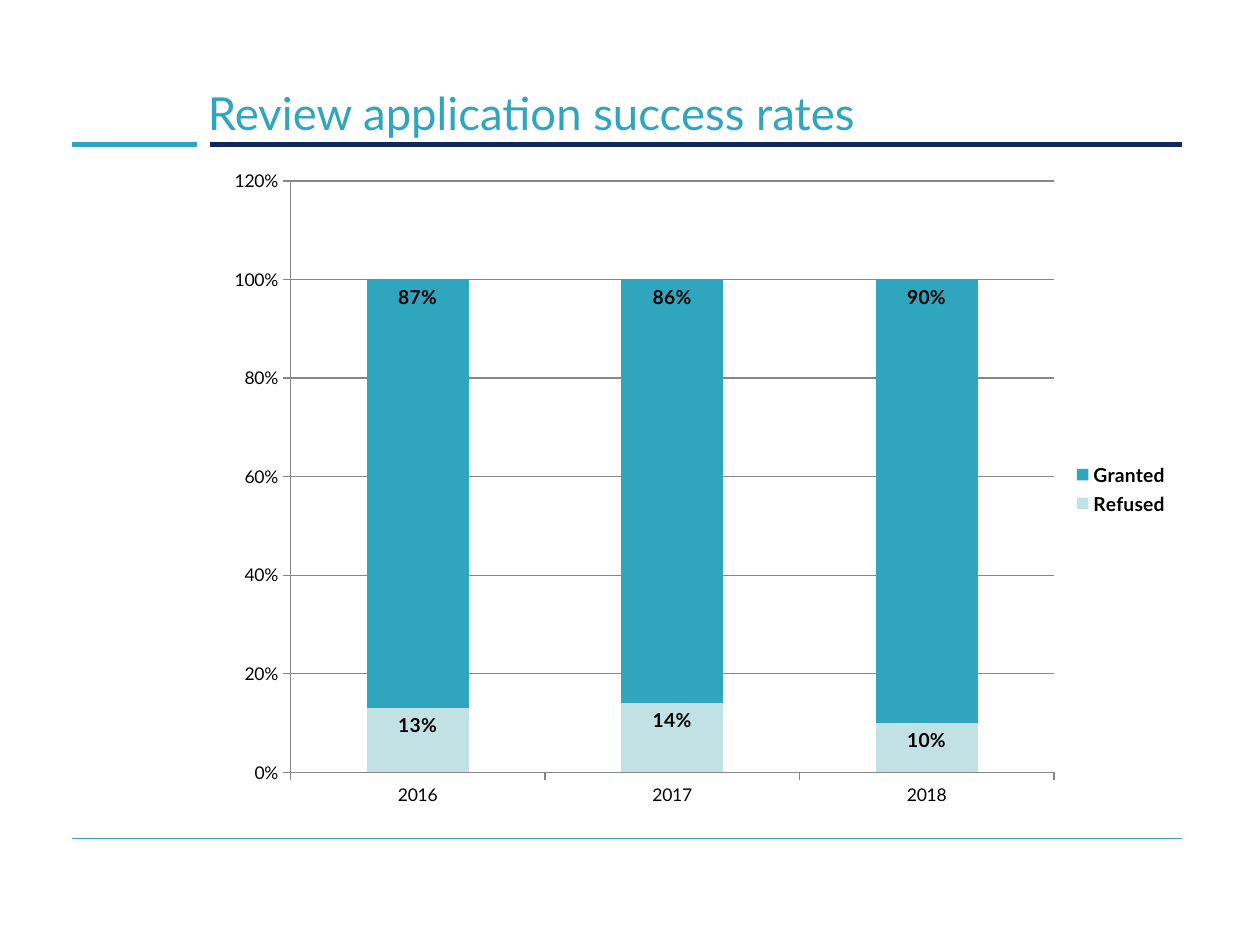
from lxml.etree import SubElement
from pptx import Presentation
from pptx.chart.data import CategoryChartData
from pptx.dml.color import RGBColor
from pptx.enum.chart import XL_CHART_TYPE as ChartType
from pptx.enum.chart import XL_LABEL_POSITION as LabelPosition
from pptx.enum.chart import XL_LEGEND_POSITION as LegendPosition
from pptx.enum.chart import XL_TICK_MARK as TickMark
from pptx.enum.shapes import MSO_CONNECTOR as Connector
from pptx.enum.text import MSO_ANCHOR as Anchor
from pptx.enum.text import MSO_AUTO_SIZE as AutoSize
from pptx.enum.text import PP_ALIGN as Align
from pptx.oxml.ns import qn
from pptx.util import Inches, Pt

TEAL = RGBColor(0x30, 0xA5, 0xBE)
PALE = RGBColor(0xC2, 0xE1, 0xE4)
NAVY = RGBColor(0x0E, 0x28, 0x5E)
BLACK = RGBColor(0, 0, 0)
GREY = RGBColor(0x86, 0x86, 0x86)
FONT = "Lato"
WIDTH, HEIGHT = Inches(10), Inches(7.5)
LEFT, INNER, RIGHT = 0.057, 0.167, 0.938
HEAD_RULE, FOOT_RULE = 0.153, 0.887

YEARS = ["2016", "2017", "2018"]
RATES = [
    ("Refused", PALE, [0.13, 0.14, 0.10]),
    ("Granted", TEAL, [0.87, 0.86, 0.90]),
]


def share_box(left, top, right, bottom):
    return (
        int(WIDTH * left), int(HEIGHT * top),
        int(WIDTH * (right - left)), int(HEIGHT * (bottom - top)),
    )


def style_font(font, size, color=BLACK, bold=False):
    font.name = FONT
    font.size = Pt(size)
    font.bold = bold
    font.color.rgb = color


def write_text(frame, text, size, color, align=Align.LEFT, anchor=Anchor.MIDDLE):
    frame.word_wrap = True
    frame.auto_size = AutoSize.NONE
    frame.vertical_anchor = anchor
    para = frame.paragraphs[0]
    para.alignment = align
    span = para.add_run()
    span.text = text
    style_font(span.font, size, color)


def add_rule(page, start, end, height, color, weight):
    left, top, width, _ = share_box(start, height, end, height)
    rule = page.shapes.add_connector(Connector.STRAIGHT, left, top, left + width, top)
    rule.line.color.rgb = color
    rule.line.width = Pt(weight)
    SubElement(rule._element.spPr, qn("a:effectLst"))


def add_rules(page):
    add_rule(page, INNER, RIGHT, HEAD_RULE, NAVY, 3)
    add_rule(page, LEFT, 0.156, HEAD_RULE, TEAL, 3)
    add_rule(page, LEFT, RIGHT, FOOT_RULE, TEAL, 0.75)


def add_title(page, box):
    title = page.shapes.title
    title.left, title.top, title.width, title.height = box
    write_text(title.text_frame, "Review application success rates", 26, TEAL)


def place_plot(chart, **shares):
    plot_area = chart._chartSpace.chart.plotArea
    for layout in plot_area.findall(qn("c:layout")):
        plot_area.remove(layout)
    layout = SubElement(plot_area, qn("c:layout"))
    plot_area.insert(0, layout)
    manual = SubElement(layout, qn("c:manualLayout"))
    settings = {"layoutTarget": "inner", "xMode": "edge", "yMode": "edge", **shares}
    for name, value in settings.items():
        SubElement(manual, qn(f"c:{name}")).set("val", str(value))


def style_axes(chart):
    for axis in (chart.category_axis, chart.value_axis):
        axis.major_tick_mark = TickMark.OUTSIDE
        axis.minor_tick_mark = TickMark.NONE
        axis.format.line.color.rgb = GREY
        axis.format.line.width = Pt(0.75)
        style_font(axis.tick_labels.font, 10)
    values = chart.value_axis
    values.minimum_scale, values.maximum_scale, values.major_unit = 0, 1.2, 0.2
    values.tick_labels.number_format = "0%"
    values.tick_labels.number_format_is_linked = False
    values.has_major_gridlines = True
    values.major_gridlines.format.line.color.rgb = GREY
    values.major_gridlines.format.line.width = Pt(0.75)


def style_series(series, color):
    series.format.fill.solid()
    series.format.fill.fore_color.rgb = color
    labels = series.data_labels
    labels.show_value = True
    labels.number_format = "0%"
    labels.number_format_is_linked = False
    labels.position = LabelPosition.INSIDE_END
    style_font(labels.font, 11, bold=True)


def add_rate_chart(page, box):
    data = CategoryChartData(number_format="0%")
    data.categories = YEARS
    for name, _, values in RATES:
        data.add_series(name, values)
    chart = page.shapes.add_chart(ChartType.COLUMN_STACKED, *box, data).chart
    chart.has_title = False
    style_font(chart.font, 10)
    plot = chart.plots[0]
    plot.gap_width, plot.overlap = 150, 100
    plot.vary_by_categories = False
    for series, (_, color, _) in zip(plot.series, RATES):
        style_series(series, color)
    style_axes(chart)
    chart.has_legend = True
    chart.legend.position = LegendPosition.RIGHT
    chart.legend.include_in_layout = False
    style_font(chart.legend.font, 11, bold=True)
    place_plot(chart, x=0.08, y=0.035, w=0.788, h=0.893)


def main():
    deck = Presentation()
    deck.slide_width, deck.slide_height = WIDTH, HEIGHT
    page = deck.slides.add_slide(deck.slide_layouts[5])
    add_rules(page)
    add_title(page, share_box(0.155, 0.07, RIGHT, 0.167))
    add_rate_chart(page, share_box(0.169, 0.167, RIGHT, 0.868))
    deck.save("out.pptx")


if __name__ == "__main__":
    main()
